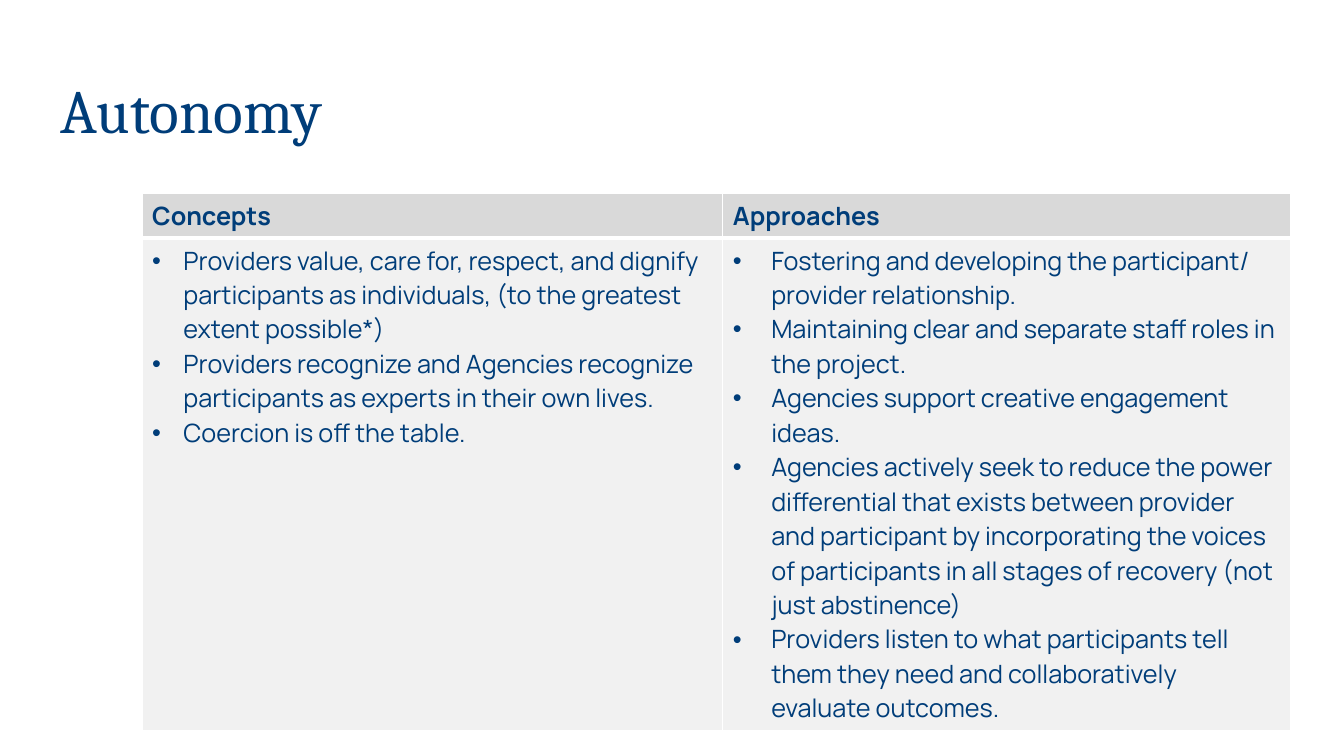
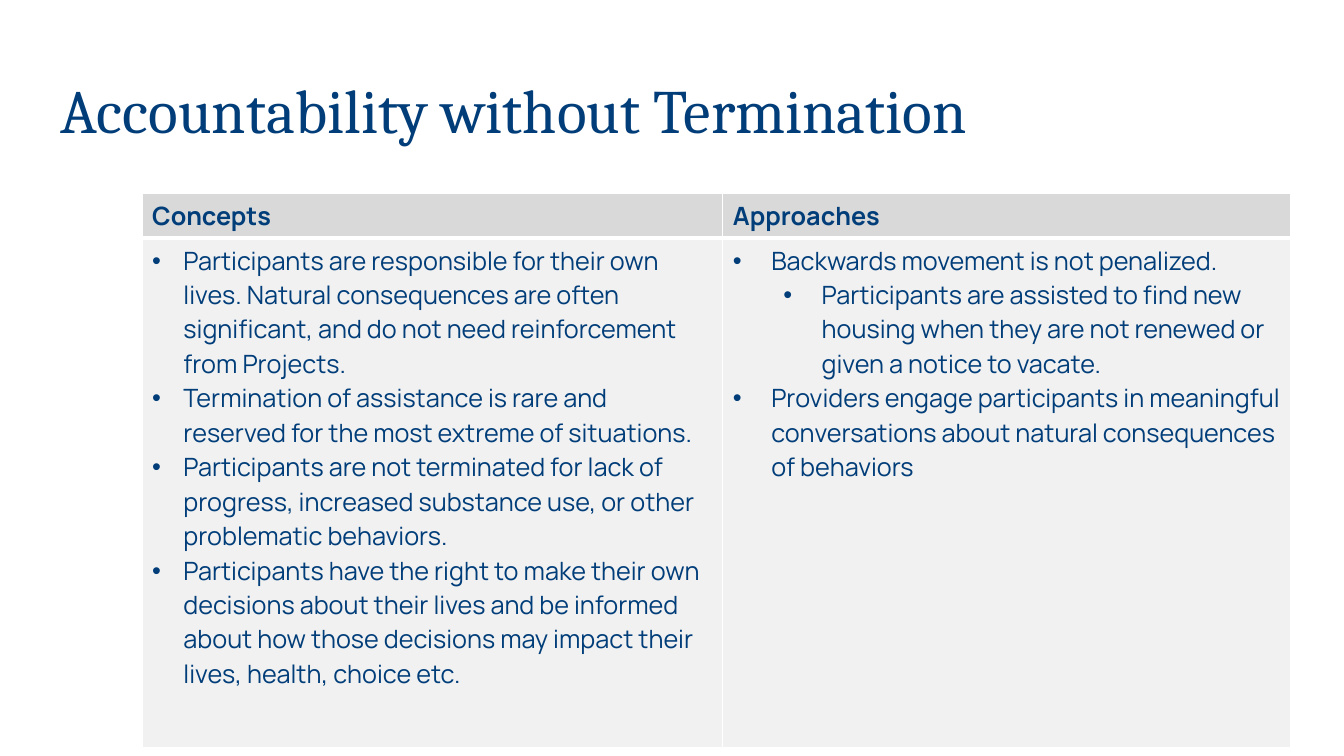
"""Build two slides that set concepts beside approaches in a table."""
from lxml import etree
from pptx import Presentation
from pptx.dml.color import RGBColor
from pptx.enum.text import MSO_ANCHOR, PP_ALIGN
from pptx.oxml.ns import qn
from pptx.util import Inches, Pt

LEFT = PP_ALIGN.LEFT
MIDDLE = MSO_ANCHOR.MIDDLE
TITLE_ONLY = 5
NAVY, HEADER_GRAY, BODY_GRAY, WHITE = "003D79", "D9D9D9", "F1F1F1", "FFFFFF"
TITLE_FONT, BODY_FONT = "Cambria", "Manrope"
HEADINGS = ["Concepts", "Approaches"]
COLUMN_WIDTHS = [5.76, 5.63]
HANGING_INDENTS = [0.31, 0.38]
LEVEL_STEP = 0.5

SLIDES = [
    ("Autonomy", [0.35, 4.48], [
        [(0, "Providers value, care for, respect, and dignify participants as "
             "individuals, (to the greatest extent possible*)"),
         (0, "Providers recognize and Agencies recognize participants as "
             "experts in their own lives."),
         (0, "Coercion is off the table.")],
        [(0, "Fostering and developing the participant/ provider relationship."),
         (0, "Maintaining clear and separate staff roles in the project."),
         (0, "Agencies support creative engagement ideas."),
         (0, "Agencies actively seek to reduce the power differential that "
             "exists between provider and participant by incorporating the "
             "voices of participants in all stages of recovery (not just "
             "abstinence)"),
         (0, "Providers listen to what participants tell them they need and "
             "collaboratively evaluate outcomes.")],
    ]),
    ("Accountability without Termination", [0.39, 5.05], [
        [(0, "Participants are responsible for their own lives. Natural "
             "consequences are often significant, and do not need "
             "reinforcement from Projects."),
         (0, "Termination of assistance is rare and reserved for the most "
             "extreme of situations."),
         (0, "Participants are not terminated for lack of progress, increased "
             "substance use, or other problematic behaviors."),
         (0, "Participants have the right to make their own decisions about "
             "their lives and be informed about how those decisions may "
             "impact their lives, health, choice etc.")],
        [(0, "Backwards movement is not penalized."),
         (1, "Participants are assisted to find new housing when they are not "
             "renewed or given a notice to vacate."),
         (0, "Providers engage participants in meaningful conversations about "
             "natural consequences of behaviors")],
    ]),
]


def format_text(paragraph, font_name, size, bold=False):
    for run in paragraph.runs:
        run.font.name = font_name
        run.font.size = Pt(size)
        run.font.bold = bold
        run.font.color.rgb = RGBColor.from_string(NAVY)


def format_cell(cell, fill, bottom_width):
    properties = cell._tc.get_or_add_tcPr()
    for side, width in (("L", 1), ("R", 1), ("T", 1), ("B", bottom_width)):
        border = etree.SubElement(properties, qn(f"a:ln{side}"), w=str(Pt(width)))
        solid = etree.SubElement(border, qn("a:solidFill"))
        etree.SubElement(solid, qn("a:srgbClr"), val=WHITE)
    cell.fill.solid()
    cell.fill.fore_color.rgb = RGBColor.from_string(fill)


prs = Presentation()
prs.slide_width, prs.slide_height = Inches(13.33), Inches(7.5)

for title_text, row_heights, columns in SLIDES:
    slide = prs.slides.add_slide(prs.slide_layouts[TITLE_ONLY])
    title = slide.shapes.title
    title.left, title.top = Inches(0.5), Inches(0.4)
    title.width, title.height = Inches(11.92), Inches(1.45)
    title.text_frame.text = title_text
    title.text_frame.vertical_anchor = MIDDLE
    heading = title.text_frame.paragraphs[0]
    heading.alignment = LEFT
    heading.line_spacing = 0.9
    format_text(heading, TITLE_FONT, 44)

    table = slide.shapes.add_table(
        2, 2, Inches(1.41), Inches(1.92),
        Inches(sum(COLUMN_WIDTHS)), Inches(sum(row_heights))).table
    table.horz_banding = False
    for row, height in zip(table.rows, row_heights):
        row.height = Inches(height)

    for index, points in enumerate(columns):
        table.columns[index].width = Inches(COLUMN_WIDTHS[index])
        header, body = table.cell(0, index), table.cell(1, index)
        format_cell(header, HEADER_GRAY, 3)
        format_cell(body, BODY_GRAY, 1)
        header.text_frame.text = HEADINGS[index]
        format_text(header.text_frame.paragraphs[0], BODY_FONT, 18, bold=True)

        body.text_frame.text = "\n".join(text for _, text in points)
        hanging = HANGING_INDENTS[index]
        for paragraph, (level, _) in zip(body.text_frame.paragraphs, points):
            paragraph.level = level
            settings = paragraph._p.get_or_add_pPr()
            settings.set("marL", str(Inches(hanging + level * LEVEL_STEP)))
            settings.set("indent", str(-Inches(hanging)))
            etree.SubElement(settings, qn("a:buFont"), typeface="Arial")
            etree.SubElement(settings, qn("a:buChar"), char="•")
            format_text(paragraph, BODY_FONT, 18)

prs.save("out.pptx")
